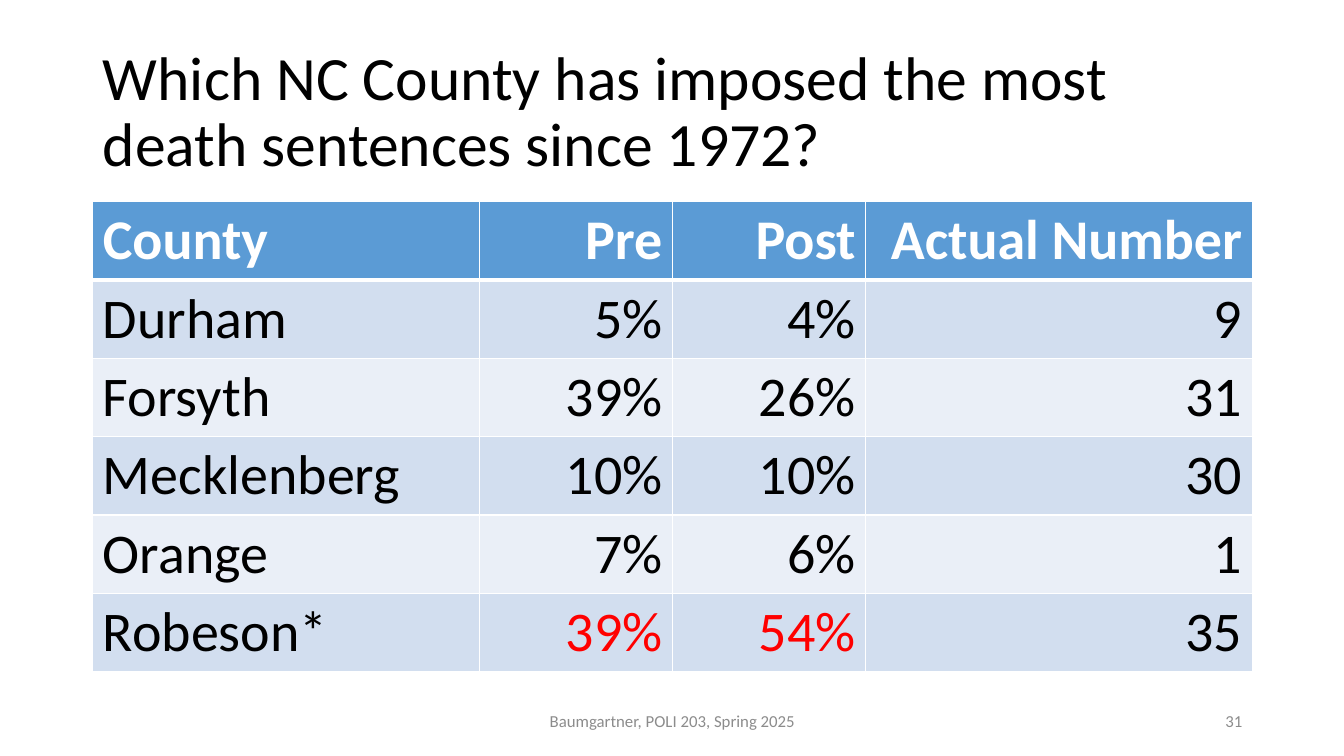
from lxml.etree import SubElement
from pptx import Presentation
from pptx.dml.color import RGBColor
from pptx.enum.text import MSO_ANCHOR as ANCHOR, PP_ALIGN as ALIGN
from pptx.oxml.ns import qn
from pptx.util import Inches, Pt

LEFT, WIDTH = 0.92, 11.5
HEADER_FILL, BANDS = "5B9BD5", ("EAEFF7", "D2DEEF")


def style(tf, size, color, align=ALIGN.LEFT, bold=False):
    """Format the single paragraph of a text frame."""
    tf.vertical_anchor = ANCHOR.MIDDLE
    p = tf.paragraphs[0]
    p.alignment = align
    font = p.runs[0].font
    font.name, font.size, font.bold = "Calibri", Pt(size), bold
    font.color.rgb = RGBColor.from_string(color)


def border(cell, side, width):
    """Add a white line on one side of a cell, ahead of its fill."""
    ln = SubElement(cell._tc.get_or_add_tcPr(), qn(f"a:ln{side}"), w=str(Pt(width)))
    SubElement(SubElement(ln, qn("a:solidFill")), qn("a:srgbClr"), val="FFFFFF")


prs = Presentation()
prs.slide_width, prs.slide_height = Inches(13.33), Inches(7.5)
s = prs.slides.add_slide(prs.slide_layouts[5])

# Title
title = s.shapes.title
title.left, title.top = Inches(LEFT), Inches(0.4)
title.width, title.height = Inches(WIDTH), Inches(1.45)
title.text_frame.text = "Which NC County has imposed the most death sentences since 1972?"
title.text_frame.paragraphs[0].line_spacing = 0.9
style(title.text_frame, 44, "000000")

# County table: column widths are sixths of the table
rows = [
    ("County", "Pre", "Post", "Actual Number"),
    ("Durham", "5%", "4%", "9"),
    ("Forsyth", "39%", "26%", "31"),
    ("Mecklenberg", "10%", "10%", "30"),
    ("Orange", "7%", "6%", "1"),
    ("Robeson*", "39%", "54%", "35"),
]
highlighted = {(5, 1), (5, 2)}
row_height = 0.77
table = s.shapes.add_table(len(rows), 4, Inches(LEFT), Inches(2), Inches(WIDTH),
                           Inches(row_height * len(rows))).table
for column, sixths in zip(table.columns, (2, 1, 1, 2)):
    column.width = Inches(WIDTH * sixths / 6)

for i, row in enumerate(rows):
    table.rows[i].height = Inches(row_height)
    for j, text in enumerate(row):
        cell = table.cell(i, j)
        for side in "LRTB":
            under_header = (i, side) in ((0, "B"), (1, "T"))
            border(cell, side, 3 if under_header else 1)
        cell.fill.solid()
        fill = BANDS[i % 2] if i else HEADER_FILL
        cell.fill.fore_color.rgb = RGBColor.from_string(fill)
        cell.text_frame.text = text
        color = "FF0000" if (i, j) in highlighted else "000000" if i else "FFFFFF"
        style(cell.text_frame, 40, color, ALIGN.RIGHT if j else ALIGN.LEFT, i == 0)
        cell.vertical_anchor = ANCHOR.TOP

# Footer and slide number
footers = [
    ("Baumgartner, POLI 203, Spring 2025", 4.42, 4.5, ALIGN.CENTER),
    ("31", 9.42, 3, ALIGN.RIGHT),
]
for text, left, width, align in footers:
    sp = s.shapes.add_textbox(Inches(left), Inches(6.95), Inches(width), Inches(0.4))
    sp.text_frame.word_wrap = True
    sp.text_frame.text = text
    style(sp.text_frame, 12, "8C8C8C", align)

prs.save("out.pptx")
